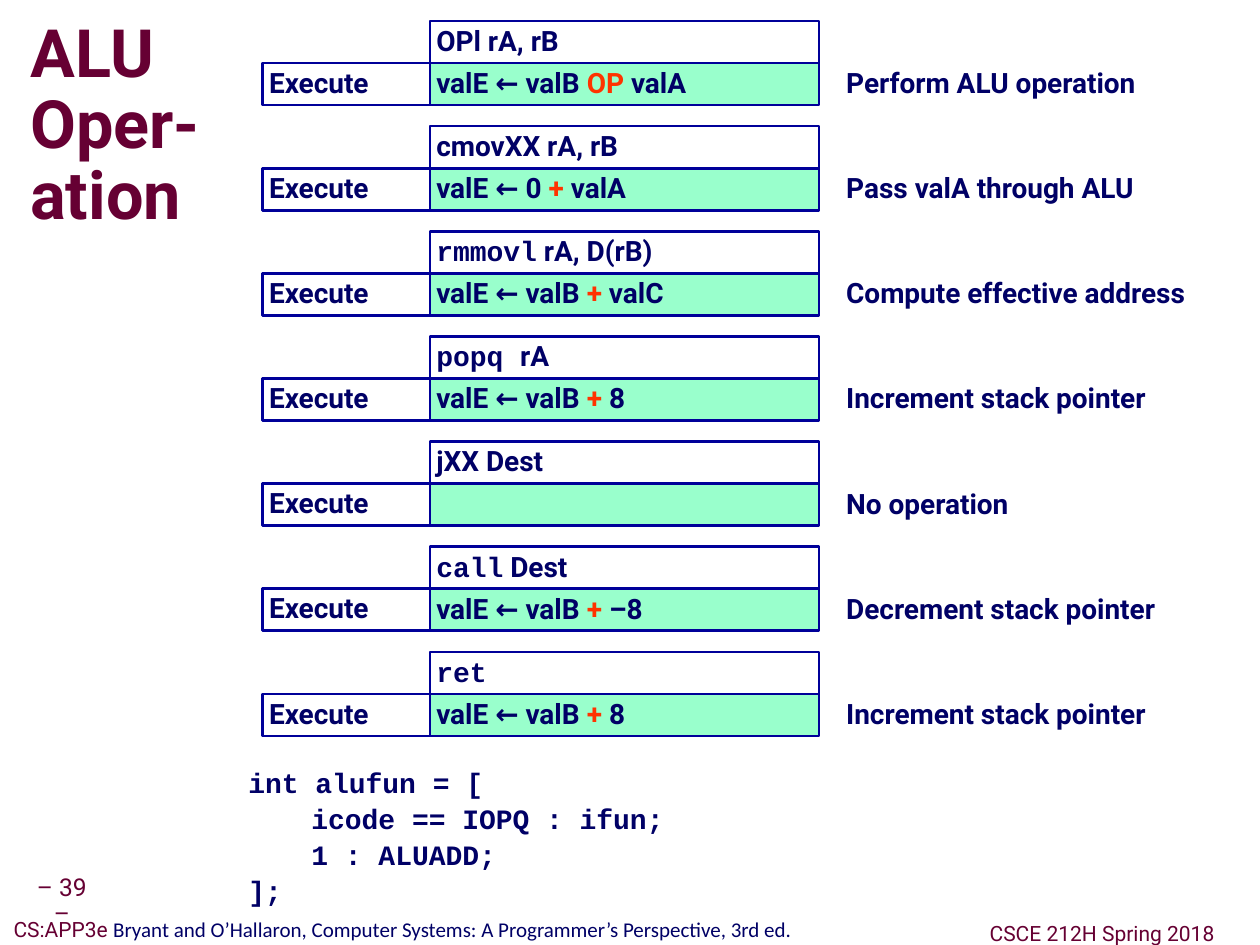
from lxml import etree
from pptx import Presentation
from pptx.dml.color import RGBColor
from pptx.enum.shapes import MSO_SHAPE as Shape
from pptx.enum.text import MSO_ANCHOR as Anchor, MSO_AUTO_SIZE as AutoSize, PP_ALIGN as Align
from pptx.oxml.ns import qn
from pptx.util import Pt

SANS, MONO, BOOK = "Roboto", "Courier New", "Calibri"
NAVY, MAROON, RED = "000066", "660033", "FF3300"
BORDER, MINT, GRAY = "000099", "99FFCC", "969696"

STAGE_LEFT, STAGE_WIDTH = 150, 96
CELL_LEFT, CELL_WIDTH, CELL_HEIGHT = 245.5, 222, 24
NOTE_LEFT = 479.5
FIRST_TOP, GROUP_PITCH = 12, 60

# Instruction (monospaced part, plain part), expression around its operator, note
OPERATIONS = [
    (("", "OPl rA, rB"), ("valE ← valB ", "OP", " valA"), "Perform ALU operation"),
    (("", "cmovXX rA, rB"), ("valE ← 0 ", "+ ", "valA"), "Pass valA through ALU"),
    (("rmmovl", " rA, D(rB)"), ("valE ← valB ", "+", " valC"), "Compute effective address"),
    (("popq ", "rA"), ("valE ← valB ", "+ ", "8"), "Increment stack pointer"),
    (("", "jXX Dest"), (), "No operation"),
    (("call", " Dest"), ("valE ← valB ", "+ ", "–8"), "Decrement stack pointer"),
    (("ret", ""), ("valE ← valB ", "+ ", "8"), "Increment stack pointer"),
]
CODE = "int alufun = [\n\ticode == IOPQ : ifun;\n\t1 : ALUADD;\n];"


def color(hex_string):
    return RGBColor.from_string(hex_string)


def format_run(run, size=16, font=SANS, fill=NAVY, bold=True):
    run.font.size = Pt(size)
    run.font.name = font
    run.font.bold = bold
    run.font.color.rgb = color(fill)


def set_frame(text_frame, inset=3.6, anchor=Anchor.TOP, wrap=True):
    text_frame.margin_left = text_frame.margin_right = Pt(inset)
    text_frame.margin_top = text_frame.margin_bottom = Pt(inset)
    text_frame.vertical_anchor = anchor
    text_frame.word_wrap = wrap
    text_frame.auto_size = AutoSize.NONE


def fill_paragraph(paragraph, pieces, align=Align.LEFT, **style):
    """Write (text, overrides) pieces as runs that share a style."""
    paragraph.alignment = align
    paragraph.line_spacing = 0.9
    for text, overrides in pieces:
        if text:
            run = paragraph.add_run()
            run.text = text
            format_run(run, **{**style, **overrides})


def add_cell(slide, left, top, width, pieces, fill=None, anchor=Anchor.TOP):
    cell = slide.shapes.add_shape(
        Shape.RECTANGLE, Pt(left), Pt(top), Pt(width), Pt(CELL_HEIGHT))
    cell.shadow.inherit = False
    if fill:
        cell.fill.solid()
        cell.fill.fore_color.rgb = color(fill)
    else:
        cell.fill.background()
    cell.line.color.rgb = color(BORDER)
    cell.line.width = Pt(1.5)
    set_frame(cell.text_frame, anchor=anchor)
    fill_paragraph(cell.text_frame.paragraphs[0], pieces)


def add_label(slide, left, top, width, height, pieces,
              anchor=Anchor.TOP, wrap=True, **options):
    label = slide.shapes.add_textbox(Pt(left), Pt(top), Pt(width), Pt(height))
    set_frame(label.text_frame, anchor=anchor, wrap=wrap)
    fill_paragraph(label.text_frame.paragraphs[0], pieces, **options)


def add_operation(slide, top, instruction, expression, note):
    mono, plain = instruction
    execute_top = top + CELL_HEIGHT
    add_cell(slide, CELL_LEFT, top, CELL_WIDTH, [(mono, {"font": MONO}), (plain, {})])
    add_cell(slide, STAGE_LEFT, execute_top, STAGE_WIDTH,
             [("Execute", {})], anchor=Anchor.MIDDLE)
    styles = ({}, {"fill": RED}, {})
    add_cell(slide, CELL_LEFT, execute_top, CELL_WIDTH,
             list(zip(expression, styles)), fill=MINT)
    add_label(slide, NOTE_LEFT, execute_top, CELL_WIDTH, CELL_HEIGHT, [(note, {})])


def add_text_shadow(run):
    effects = etree.Element(qn("a:effectLst"))
    shadow = etree.SubElement(effects, qn("a:outerShdw"), dist="35921", dir="2700000")
    etree.SubElement(shadow, qn("a:srgbClr"), val=GRAY)
    run.font._element.find(qn("a:solidFill")).addnext(effects)


def set_title(slide, text):
    title = slide.shapes.title
    title.left, title.top, title.width, title.height = Pt(17.3), Pt(41.8), Pt(685.4), Pt(61.2)
    set_frame(title.text_frame, inset=0, anchor=Anchor.MIDDLE)
    title.text_frame.text = text
    paragraph = title.text_frame.paragraphs[0]
    paragraph.alignment = Align.LEFT
    paragraph.line_spacing = 0.89
    for run in paragraph.runs:
        format_run(run, size=38, fill=MAROON)
        add_text_shadow(run)


def add_code(slide, text):
    box = slide.shapes.add_textbox(Pt(138.2), Pt(432), Pt(450), Pt(84.2))
    set_frame(box.text_frame)
    box.text_frame.text = text
    for paragraph in box.text_frame.paragraphs:
        paragraph.line_spacing = 1.07
        for run in paragraph.runs:
            format_run(run, font=MONO)


def add_footers(slide):
    style = dict(anchor=Anchor.MIDDLE, align=Align.CENTER, fill=MAROON, bold=False)
    add_label(slide, 16.3, 503.3, 38, 22.3, [("– 39 –", {})], size=14, **style)
    book = "Bryant and O’Hallaron, Computer Systems: A Programmer’s Perspective, 3rd ed."
    add_label(slide, 0, 521.3, 460, 20.2,
              [("CS:APP3e ", {}), (book, {"font": BOOK, "fill": NAVY})],
              size=12, wrap=False, **style)
    add_label(slide, 558.7, 523.4, 141, 20.2, [("CSCE 212H Spring 2018", {})],
              size=12, wrap=False, **style)


def main():
    presentation = Presentation()
    presentation.slide_width, presentation.slide_height = Pt(719.3), Pt(539.3)
    title_only = presentation.slide_layouts[5]
    slide = presentation.slides.add_slide(title_only)
    set_title(slide, "ALU\vOper-\vation")
    for index, operation in enumerate(OPERATIONS):
        add_operation(slide, FIRST_TOP + index * GROUP_PITCH, *operation)
    add_code(slide, CODE)
    add_footers(slide)
    presentation.save("out.pptx")


if __name__ == "__main__":
    main()
